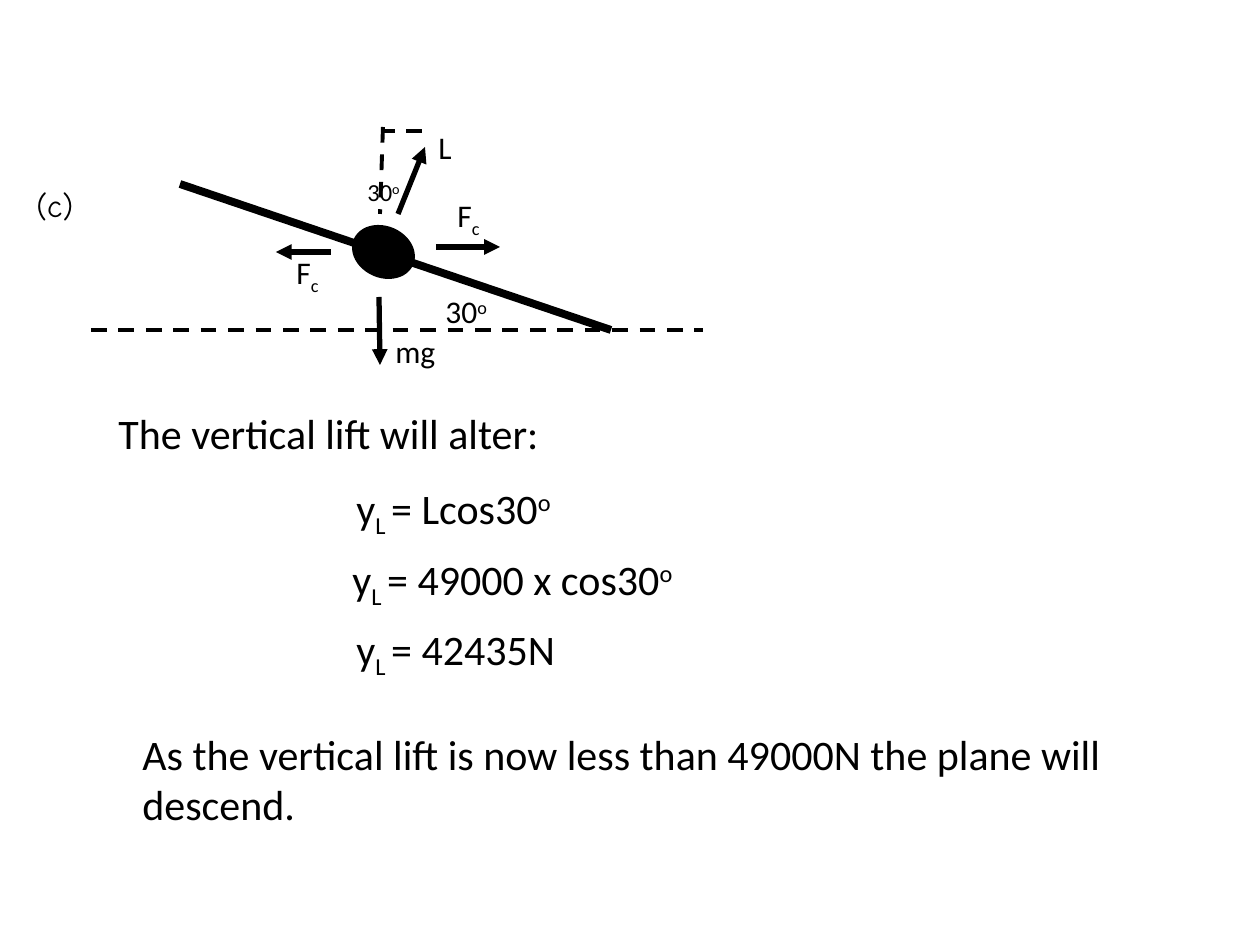
from dataclasses import dataclass

from lxml.etree import SubElement
from pptx import Presentation
from pptx.dml.color import RGBColor
from pptx.enum.dml import MSO_LINE_DASH_STYLE as DASH
from pptx.enum.shapes import MSO_CONNECTOR as CONN, MSO_SHAPE as SHAPE
from pptx.enum.text import MSO_AUTO_SIZE as FIT
from pptx.oxml.ns import qn
from pptx.util import Pt

PX = 914400 / 126
SUB, SUP = -25000, 30000


def px(n):
    return round(n * PX)


@dataclass(frozen=True)
class Theme:
    ink: RGBColor = RGBColor(0, 0, 0)
    font: str = "Calibri"
    part_font: str = "Comic Neue"
    body: int = 24
    label: int = 18
    small: int = 14
    wing: float = 4.5
    arrow: float = 3
    guide: float = 2.25
    outline: float = 1


class Builder:
    def __init__(self, slide, theme):
        self.slide, self.theme = slide, theme

    def text(self, x, y, w, h, *parts, size, font=None, wrap=False):
        """Add a text box; each part is a string or a (string, baseline) pair."""
        tf = self.slide.shapes.add_textbox(px(x), px(y), px(w), px(h)).text_frame
        tf.word_wrap = wrap
        tf.auto_size = FIT.SHAPE_TO_FIT_TEXT
        p = tf.paragraphs[0]
        for part in parts:
            words, baseline = (part, 0) if isinstance(part, str) else part
            r = p.add_run()
            r.text = words
            r.font.size = Pt(size)
            r.font.name = font or self.theme.font
            r.font.color.rgb = self.theme.ink
            if baseline:
                r._r.get_or_add_rPr().set("baseline", str(baseline))

    def line(self, x1, y1, x2, y2, weight, parent=None):
        shapes = (parent or self.slide).shapes
        c = shapes.add_connector(CONN.STRAIGHT, px(x1), px(y1), px(x2), px(y2))
        c.line.width = Pt(weight)
        c.line.color.rgb = self.theme.ink
        SubElement(c._element.spPr, qn("a:effectLst"))
        return c

    def guide(self, *ends):
        self.line(*ends, self.theme.guide).line.dash_style = DASH.DASH

    def arrow(self, *ends):
        c = self.line(*ends, self.theme.arrow)
        SubElement(c.line._get_or_add_ln(), qn("a:tailEnd"), type="triangle")

    def ellipse(self, x, y, w, h, rotation, parent):
        sp = parent.shapes.add_shape(SHAPE.OVAL, px(x), px(y), px(w), px(h))
        sp.rotation = rotation
        sp.shadow.inherit = False
        sp.fill.solid()
        sp.fill.fore_color.rgb = self.theme.ink
        sp.line.color.rgb = self.theme.ink
        sp.line.width = Pt(self.theme.outline)

    def plane(self):
        group = self.slide.shapes.add_group_shape()
        self.line(180, 184, 611, 330, self.theme.wing, group)
        self.ellipse(352, 227, 63, 50, 23.4, group)


def main():
    prs = Presentation()
    prs.slide_width, prs.slide_height = px(1260), px(945)
    theme = Theme()
    b = Builder(prs.slides.add_slide(prs.slide_layouts[6]), theme)
    degree = ("o", SUP)

    b.text(24, 180, 74, 50, "(c)", size=theme.label, font=theme.part_font)
    b.text(106, 401, 451, 63, "The vertical lift will alter:", size=theme.body)

    b.plane()
    b.guide(91, 330, 703, 330)
    b.text(433, 286, 88, 50, "30", degree, size=theme.label, wrap=True)

    forces = [
        (("F", ("c", SUB)), (284, 247, 49, 50), (331, 252, 276, 252)),
        (("F", ("c", SUB)), (445, 190, 49, 50), (436, 247, 500, 247)),
        (("mg",), (383, 326, 66, 50), (379, 297, 380, 365)),
        (("L",), (426, 122, 39, 50), (398, 214, 425, 147)),
    ]
    for name, box, ends in forces:
        b.text(*box, *name, size=theme.label)
        b.arrow(*ends)

    b.guide(383, 127, 380, 214)
    b.guide(422, 131, 383, 131)
    b.text(355, 171, 88, 43, "30", degree, size=theme.small, wrap=True)

    equations = [
        (344, 476, ("= Lcos30", degree)),
        (340, 547, ("= 49000 x cos30", degree)),
        (344, 617, ("= 42435N",)),
    ]
    for x, y, value in equations:
        b.text(x, y, 408, 63, "y", ("L ", SUB), *value, size=theme.body, wrap=True)

    b.text(130, 722, 1047, 115,
           "As the vertical lift is now less than 49000N the plane will descend.",
           size=theme.body, wrap=True)
    prs.save("out.pptx")


if __name__ == "__main__":
    main()
